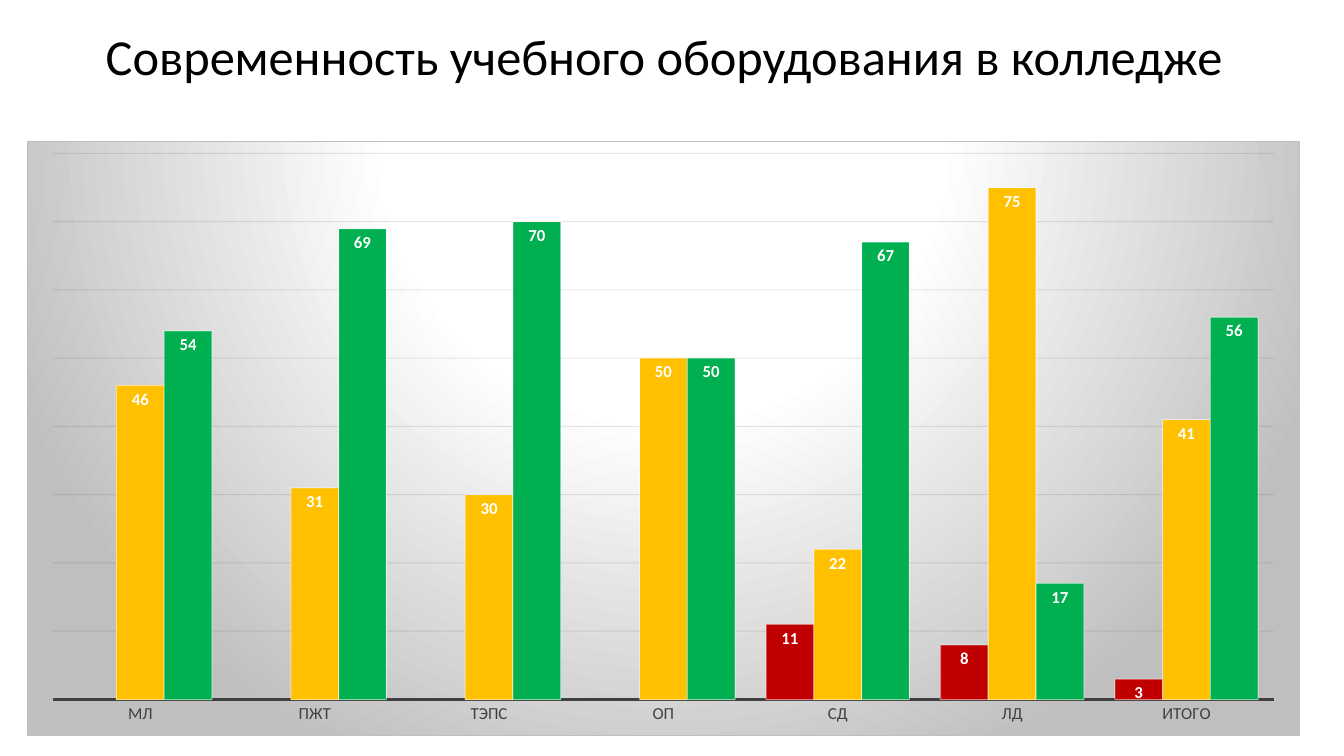
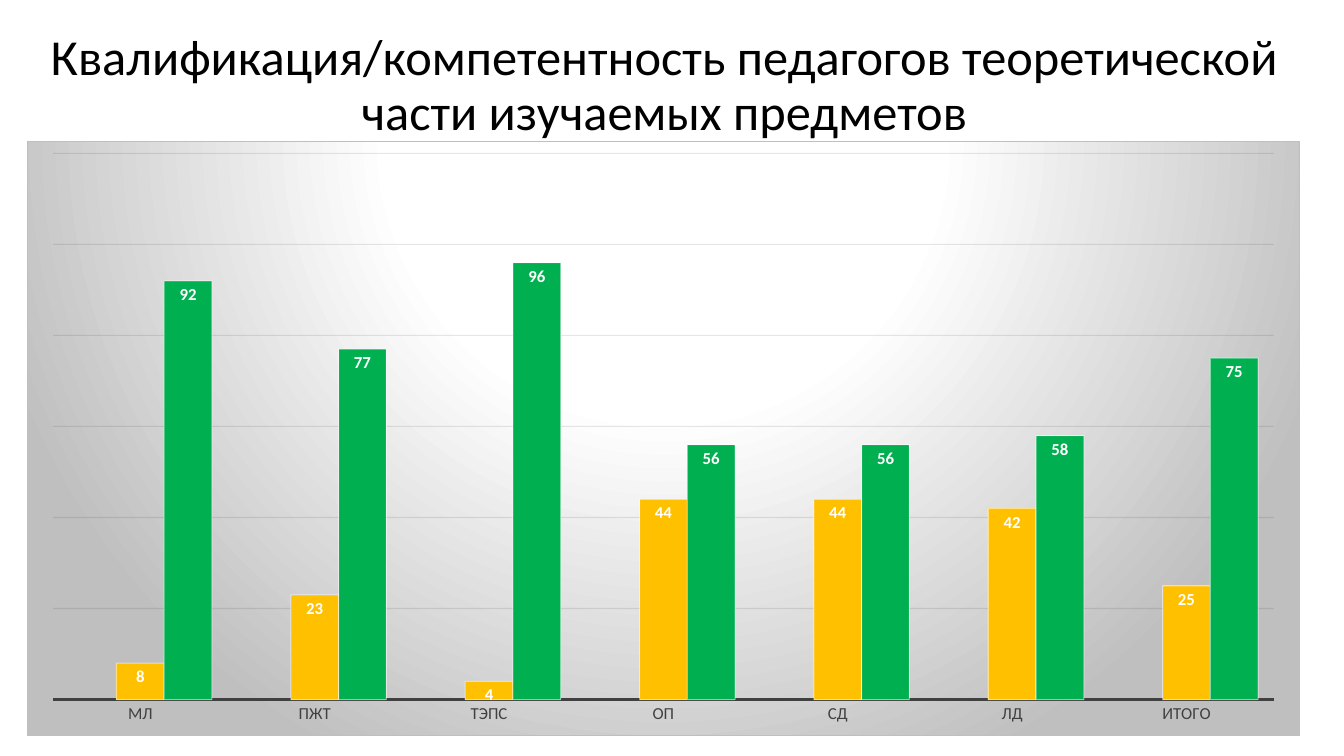
import pptx
import pptx.util
import pptx.chart.data
import pptx.dml.color
import pptx.enum.chart
import pptx.enum.text
import pptx.oxml
import pptx.oxml.ns
from pptx.util import Inches

FONT = "Calibri"
COLORS = {
    "text": "000000",
    "axis": "404040",
    "grid": "0D0D0D",
    "white": "FFFFFF",
    "gray": "BFBFBF",
    "low": "C00000",
    "middle": "FFC000",
    "high": "00B050",
}
TITLE_BOX = (0.3, 0.27, 12.58, 1.08)
CHART_BOX = (0.27, 1.4, 12.62, 5.9)
CATEGORIES = ["МЛ", "ПЖТ", "ТЭПС", "ОП", "СД", "ЛД", "ИТОГО"]
SERIES_COLORS = ["low", "middle", "high"]

# Title, series values, axis maximum and gridline step of each slide
SLIDES = [
    ("Современность учебного оборудования в колледже",
     [[None, None, None, None, 11, 8, 3],
      [46, 31, 30, 50, 22, 75, 41],
      [54, 69, 70, 50, 67, 17, 56]], 80, 10),
    ("Квалификация/компетентность педагогов теоретической части изучаемых предметов",
     [[None] * len(CATEGORIES),
      [8, 23, 4, 44, 44, 42, 25],
      [92, 77, 96, 56, 56, 58, 75]], 120, 20),
]


def color(name):
    return pptx.dml.color.RGBColor.from_string(COLORS[name])


def style_font(font, size, color_name, bold=False):
    font.name = FONT
    font.size = pptx.util.Pt(size)
    font.bold = bold
    font.color.rgb = color(color_name)


def style_line(line, color_name, width):
    line.color.rgb = color(color_name)
    line.width = pptx.util.Pt(width)


def set_opacity(chart, path, percent):
    for element in chart.element.xpath(path + "/c:spPr/a:ln//a:srgbClr"):
        alpha = pptx.oxml.parse_xml(
            f'<a:alpha {pptx.oxml.ns.nsdecls("a")} val="{percent * 1000}"/>')
        element.append(alpha)


def add_chart_background(chart):
    """Radial gradient and thin border; goes just before the chart's text style."""
    stops = "".join(
        f'<a:gs pos="{position * 1000}"><a:srgbClr val="{COLORS[name]}"/></a:gs>'
        for position, name in [(0, "white"), (39, "white"), (100, "gray")])
    background = pptx.oxml.parse_xml(
        f'<c:spPr {pptx.oxml.ns.nsdecls("c", "a")}>'
        f'<a:gradFill><a:gsLst>{stops}</a:gsLst><a:path path="circle">'
        '<a:fillToRect l="50000" t="-80000" r="50000" b="180000"/></a:path></a:gradFill>'
        f'<a:ln w="{pptx.util.Pt(0.75)}"><a:solidFill>'
        f'<a:srgbClr val="{COLORS["gray"]}"/></a:solidFill></a:ln></c:spPr>')
    chart.element.xpath("./c:txPr")[0].addprevious(background)


def add_title(slide, box, text):
    title = slide.shapes.title
    title.left, title.top, title.width, title.height = map(Inches, box)
    text_frame = title.text_frame
    text_frame.text = text
    text_frame.word_wrap = True
    text_frame.auto_size = pptx.enum.text.MSO_AUTO_SIZE.NONE
    text_frame.vertical_anchor = pptx.enum.text.MSO_ANCHOR.TOP
    paragraph = text_frame.paragraphs[0]
    paragraph.alignment = pptx.enum.text.PP_ALIGN.CENTER
    paragraph.line_spacing = 0.9
    style_font(paragraph.runs[0].font, 36, "text")


def add_column_chart(slide, box, values, maximum, step):
    data = pptx.chart.data.CategoryChartData()
    data.categories = CATEGORIES
    for number, series_values in enumerate(values, 1):
        data.add_series(f"Series {number}", series_values)
    chart = slide.shapes.add_chart(
        pptx.enum.chart.XL_CHART_TYPE.COLUMN_CLUSTERED, *map(Inches, box), data).chart
    chart.has_legend = False
    chart.has_title = False
    style_font(chart.font, 10, "text")
    add_chart_background(chart)

    # Axes
    category_axis = chart.category_axis
    category_axis.major_tick_mark = pptx.enum.chart.XL_TICK_MARK.NONE
    style_font(category_axis.tick_labels.font, 12, "axis")
    style_line(category_axis.format.line, "axis", 1.5)
    value_axis = chart.value_axis
    value_axis.visible = False
    value_axis.minimum_scale = 0
    value_axis.maximum_scale = maximum
    value_axis.major_unit = step
    value_axis.has_major_gridlines = True
    style_line(value_axis.major_gridlines.format.line, "grid", 0.75)

    # Columns and their labels
    plot = chart.plots[0]
    plot.gap_width = 65
    plot.overlap = 0
    plot.vary_by_categories = False
    for series, color_name in zip(plot.series, SERIES_COLORS):
        series.invert_if_negative = False
        series.format.fill.solid()
        series.format.fill.fore_color.rgb = color(color_name)
        style_line(series.format.line, "white", 0.75)
        labels = series.data_labels
        labels.show_value = True
        labels.position = pptx.enum.chart.XL_LABEL_POSITION.INSIDE_END
        style_font(labels.font, 12, "white", bold=True)

    set_opacity(chart, "//c:majorGridlines", 10)
    set_opacity(chart, "//c:ser", 50)


def main():
    presentation = pptx.Presentation()
    presentation.slide_width = Inches(13.33)
    presentation.slide_height = Inches(7.5)
    title_only = presentation.slide_layouts.get_by_name("Title Only")
    for title, values, maximum, step in SLIDES:
        slide = presentation.slides.add_slide(title_only)
        add_title(slide, TITLE_BOX, title)
        add_column_chart(slide, CHART_BOX, values, maximum, step)
    presentation.save("out.pptx")


if __name__ == "__main__":
    main()
